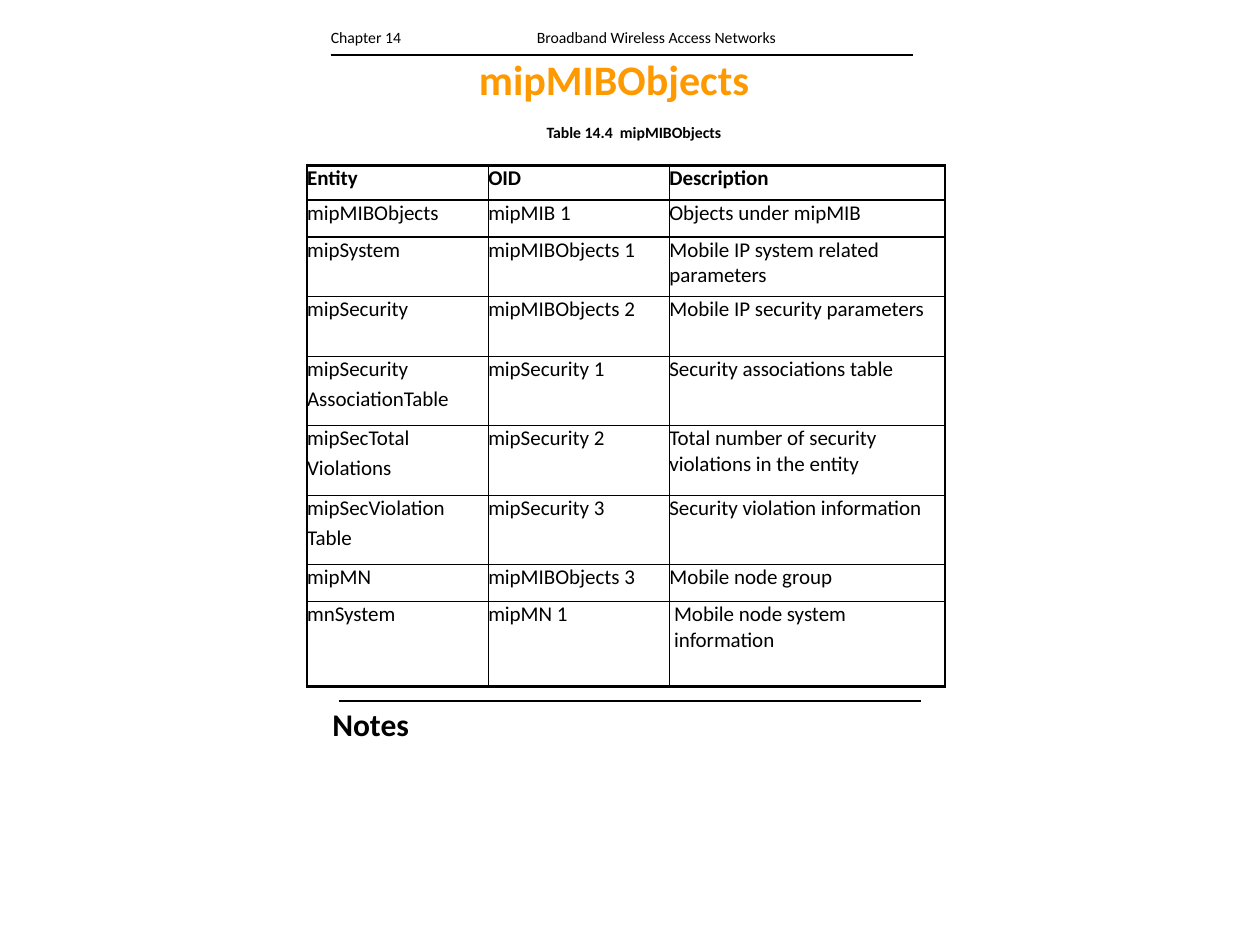
from dataclasses import dataclass
from lxml.etree import SubElement
from pptx import Presentation
from pptx.dml.color import RGBColor
from pptx.enum.shapes import MSO_CONNECTOR
from pptx.enum.text import MSO_ANCHOR, MSO_AUTO_SIZE, PP_ALIGN
from pptx.oxml.ns import qn
from pptx.util import Inches, Pt


@dataclass(frozen=True)
class Theme:
    font: str = "Calibri"
    ink: str = "000000"
    accent: str = "FF9900"
    head: float = 32
    notes: float = 24
    body: float = 16
    small: float = 12
    thin: float = 1
    thick: float = 2.25
    gap: float = 3.2


def write(frame, text, size, font, color, bold=False, align=PP_ALIGN.LEFT, gap=0):
    frame.text = text
    for index, para in enumerate(frame.paragraphs):
        para.alignment = align
        para.space_before = Pt(gap if index else 0)
        for run in para.runs:
            run.font.size = Pt(size)
            run.font.name = font
            run.font.bold = bold
            run.font.color.rgb = RGBColor.from_string(color)


class Page:
    COLS, ROWS = 160, 120

    def __init__(self, deck, theme):
        self.theme = theme
        self.wide = deck.slide_width / self.COLS
        self.high = deck.slide_height / self.ROWS
        self.slide = deck.slides.add_slide(deck.slide_layouts[5])

    def grid(self, *cells):
        units = (self.wide, self.high)
        return [round(cell * units[i % 2]) for i, cell in enumerate(cells)]

    def style(self, frame, text, size, **look):
        write(frame, text, size, self.theme.font, **{"color": self.theme.ink, **look})

    def title(self, text, *box):
        shape = self.slide.shapes.title
        shape.left, shape.top, shape.width, shape.height = self.grid(*box)
        frame = shape.text_frame
        frame.auto_size = MSO_AUTO_SIZE.NONE
        frame.vertical_anchor = MSO_ANCHOR.MIDDLE
        self.style(frame, text, self.theme.head, color=self.theme.accent,
                   bold=True, align=PP_ALIGN.CENTER)

    def label(self, text, size, *box, inset=0.1, tab=None, **look):
        frame = self.slide.shapes.add_textbox(*self.grid(*box)).text_frame
        frame.word_wrap = True
        frame.margin_left = Inches(inset)
        self.style(frame, text, size, **look)
        if tab:
            stops = SubElement(frame.paragraphs[0]._p.get_or_add_pPr(), qn("a:tabLst"))
            SubElement(stops, qn("a:tab"), pos=str(Inches(tab)), algn="l")

    def rule(self, left, right, row):
        line = self.slide.shapes.add_connector(
            MSO_CONNECTOR.STRAIGHT, *self.grid(left, row, right, row))
        line.line.width = Pt(self.theme.thin)
        line.line.color.rgb = RGBColor.from_string(self.theme.ink)
        SubElement(line._element.spPr, qn("a:effectLst"))

    def border(self, cell, outer):
        props = cell._tc.get_or_add_tcPr()
        for side, edge in outer.items():
            width = self.theme.thick if edge else self.theme.thin
            line = SubElement(props, qn(f"a:ln{side}"), w=str(Pt(width)))
            fill = SubElement(line, qn("a:solidFill"))
            SubElement(fill, qn("a:srgbClr"), val=self.theme.ink)

    def table(self, rows, left, top, widths, heights):
        box = self.grid(left, top, sum(widths), sum(heights))
        table = self.slide.shapes.add_table(len(rows), len(widths), *box).table
        table.first_row = table.horz_banding = False
        for column, width in zip(table.columns, widths):
            column.width = round(width * self.wide)
        for r, (row, height) in enumerate(zip(rows, heights)):
            table.rows[r].height = round(height * self.high)
            for c, text in enumerate(row):
                cell = table.cell(r, c)
                cell.margin_left = Inches(0.05 if "\v" in text else 0)
                cell.margin_top = cell.margin_right = cell.margin_bottom = 0
                self.style(cell.text_frame, text, self.theme.body,
                           bold=r == 0, gap=self.theme.gap)
                self.border(cell, {"L": c == 0, "R": c == len(widths) - 1,
                                   "T": r == 0, "B": r == len(rows) - 1})
                cell.fill.background()


ROWS = [
    ("Entity", "OID", "Description"),
    ("mipMIBObjects", "mipMIB 1", "Objects under mipMIB"),
    ("mipSystem", "mipMIBObjects 1", "Mobile IP system related parameters"),
    ("mipSecurity", "mipMIBObjects 2", "Mobile IP security parameters"),
    ("mipSecurity\nAssociationTable", "mipSecurity 1", "Security associations table"),
    ("mipSecTotal\nViolations", "mipSecurity 2",
     "Total number of security violations in the entity"),
    ("mipSecViolation\nTable", "mipSecurity 3", "Security violation information"),
    ("mipMN", "mipMIBObjects 3", "Mobile node group"),
    ("mnSystem", "mipMN 1", "Mobile node system\vinformation"),
]


def main():
    deck = Presentation()
    deck.slide_width, deck.slide_height = Inches(13.33), Inches(10)
    theme = Theme()
    page = Page(deck, theme)
    page.rule(43, 117, 89)
    page.label("Notes", theme.notes, 35, 89, 20, 6, inset=0.6, bold=True)
    page.title("mipMIBObjects", 41, 7, 74, 6)
    page.table(ROWS, 39, 21, (23, 23, 35),
               (4.4, 4.7, 7.6, 7.6, 8.8, 8.8, 8.8, 4.7, 10.8))
    page.rule(42, 116, 7)
    page.label("Chapter 14\tBroadband Wireless Access Networks", theme.small,
               39, 3, 77.4, 3.6, inset=0.25, tab=2.18)
    page.label("Table 14.4  mipMIBObjects", theme.small, 40, 15, 81, 3.6,
               bold=True, align=PP_ALIGN.CENTER)
    deck.save("out.pptx")


if __name__ == "__main__":
    main()
